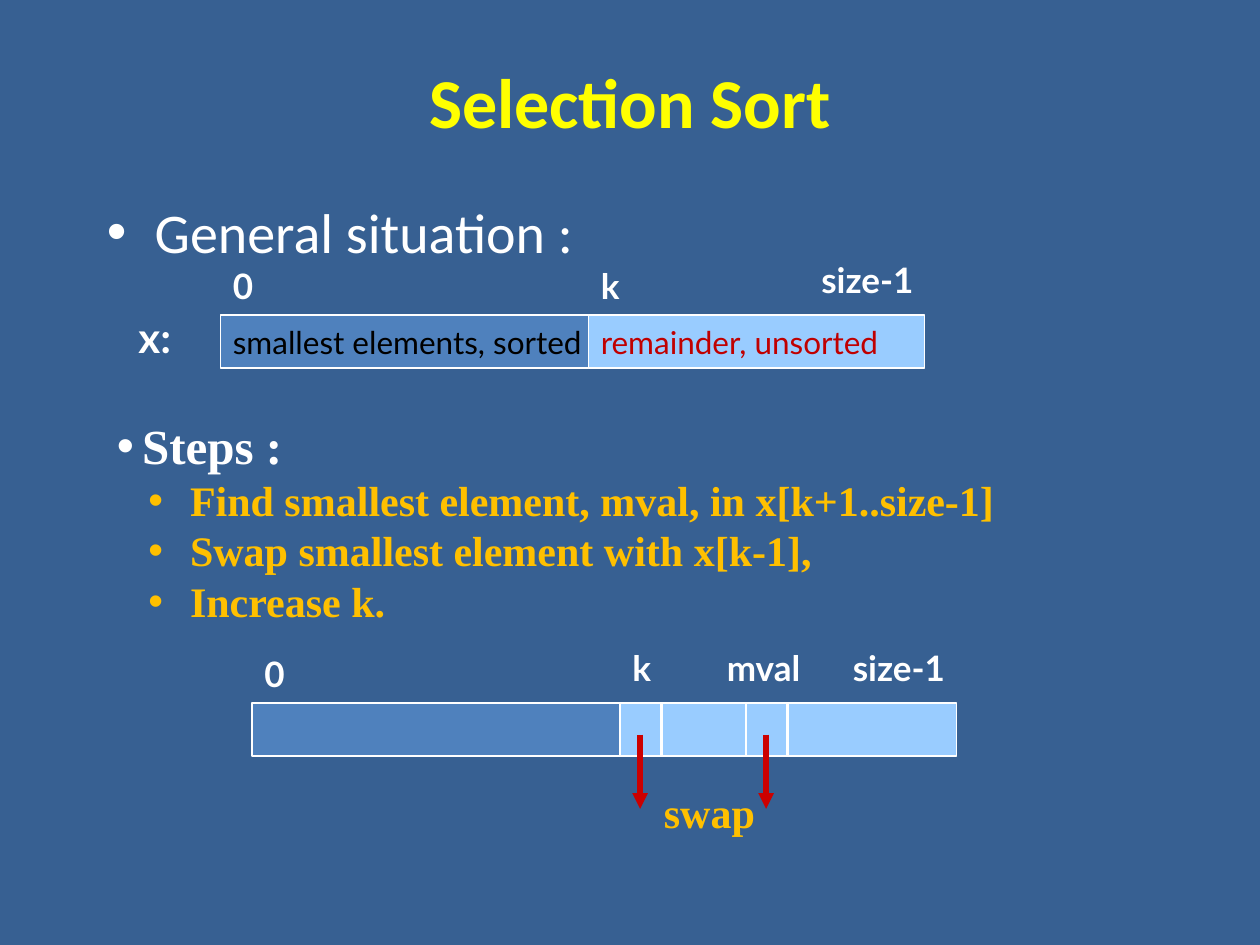
from lxml import etree
from pptx import Presentation
from pptx.dml.color import RGBColor
from pptx.enum.shapes import MSO_CONNECTOR, MSO_SHAPE
from pptx.enum.text import MSO_ANCHOR, PP_ALIGN
from pptx.oxml.ns import qn
from pptx.util import Inches, Pt

COLORS = {
    "background": "376092", "title": "FFFF00", "white": "FFFFFF",
    "sorted": "4F81BD", "unsorted": "99CCFF", "black": "000000",
    "remainder": "C00000", "step": "FFC000", "arrow": "CC0000",
}
TITLE = "Selection Sort"
SITUATION = "General situation :"
STEPS_HEADING = "Steps :"
STEPS = [
    "Find smallest element, mval, in x[k+1..size-1]",
    "Swap smallest element with x[k-1],",
    "Increase k.",
]
SORTED_W, UNSORTED_W, BAR_H = 2.92, 2.67, 0.42
ARRAYS = [
    {
        "left": 1.75, "top": 2.5,
        "texts": ["smallest elements, sorted", "remainder, unsorted"],
        "labels": [("0", 0, 0.45, 0.38), ("k", 2.92, 0.45, 0.37), ("size-1", 4.67, 0.5, 1.43)],
    },
    {
        "left": 2, "top": 5.58,
        "texts": ["", ""],
        "labels": [("0", 0, 0.45, 0.38), ("k", 2.92, 0.5, 0.37),
                   ("mval", 3.67, 0.5, 1.43), ("size-1", 4.67, 0.5, 1.43)],
    },
]
DIVIDERS = [5.25, 5.92, 6.25]
SWAP_ARROWS = [5.08, 6.08]


def rgb(name):
    return RGBColor.from_string(COLORS[name])


def style(p, size, color, font="Lato", bold=False):
    for r in p.runs:
        r.font.size = Pt(size)
        r.font.name = font
        r.font.bold = bold
        r.font.color.rgb = rgb(color)


def add_text(s, text, left, top, width, height, size, color, font="Lato", bold=True):
    tf = s.shapes.add_textbox(Inches(left), Inches(top), Inches(width), Inches(height)).text_frame
    tf.word_wrap = True
    tf.text = text
    style(tf.paragraphs[0], size, color, font, bold)
    return tf


def add_bullet(p, margin, hanging):
    pPr = p._p.get_or_add_pPr()
    pPr.set("marL", str(Inches(margin)))
    pPr.set("indent", str(-Inches(hanging)))
    etree.SubElement(pPr, qn("a:buFont")).set("typeface", "Arial")
    etree.SubElement(pPr, qn("a:buChar")).set("char", "•")


def add_bar(s, left, top, width, fill, text, color):
    sp = s.shapes.add_shape(MSO_SHAPE.RECTANGLE, Inches(left), Inches(top), Inches(width), Inches(BAR_H))
    sp.shadow.inherit = False
    sp.fill.solid()
    sp.fill.fore_color.rgb = rgb(fill)
    sp.line.color.rgb = rgb("white")
    sp.line.width = Pt(0.75)
    if text:
        tf = sp.text_frame
        tf.word_wrap = False
        tf.vertical_anchor = MSO_ANCHOR.MIDDLE
        tf.text = text
        tf.paragraphs[0].alignment = PP_ALIGN.LEFT
        style(tf.paragraphs[0], 18, color)


def add_vertical(s, x, top, bottom, color, width, arrow=False):
    line = s.shapes.add_connector(MSO_CONNECTOR.STRAIGHT, Inches(x), Inches(top), Inches(x), Inches(bottom))
    line.line.color.rgb = rgb(color)
    line.line.width = Pt(width)
    if arrow:
        etree.SubElement(line.line._get_or_add_ln(), qn("a:tailEnd")).set("type", "triangle")
    etree.SubElement(line._element.spPr, qn("a:effectLst"))


def add_array(s, left, top, texts, labels):
    add_bar(s, left + SORTED_W, top, UNSORTED_W, "unsorted", texts[1], "remainder")
    add_bar(s, left, top, SORTED_W, "sorted", texts[0], "black")
    for text, dx, rise, width in labels:
        add_text(s, text, left + dx, top - rise, width, 0.43, 20, "white")


def add_steps(s):
    tf = add_text(s, STEPS_HEADING, 0.83, 3.25, 7.72, 1.78, 28, "white", "Times New Roman")
    add_bullet(tf.paragraphs[0], 0.2, 0.2)
    for step in STEPS:
        p = tf.add_paragraph()
        p.text = step
        p.level = 1
        p.line_spacing = Pt(28.8)
        style(p, 24, "step", "Times New Roman", True)
        add_bullet(p, 0.58, 0.33)


def main():
    prs = Presentation()
    prs.slide_width, prs.slide_height = Inches(10), Inches(7.5)
    s = prs.slides.add_slide(prs.slide_layouts[5])
    s.background.fill.solid()
    s.background.fill.fore_color.rgb = rgb("background")

    title = s.shapes.title
    title.left, title.top, title.width, title.height = (Inches(v) for v in (0.5, 0.17, 9, 1.25))
    tf = title.text_frame
    tf.text = TITLE
    tf.vertical_anchor = MSO_ANCHOR.MIDDLE
    tf.paragraphs[0].alignment = PP_ALIGN.CENTER
    style(tf.paragraphs[0], 40, "title", "Calibri", True)

    tf = add_text(s, SITUATION, 0.75, 1.52, 8.5, 0.72, 32, "white", "Calibri", False)
    add_bullet(tf.paragraphs[0], 0.38, 0.38)
    add_text(s, "x:", 1, 2.42, 0.52, 0.5, 24, "white")
    add_steps(s)
    for array in ARRAYS:
        add_array(s, **array)

    top = ARRAYS[1]["top"]
    for x in DIVIDERS:
        add_vertical(s, x, top, top + BAR_H, "white", 1.5)
    for x in SWAP_ARROWS:
        add_vertical(s, x, top + 0.25, top + 0.84, "arrow", 3, True)
    add_text(s, "swap", 5.17, 6.19, 1.25, 0.5, 24, "step", "Times New Roman")

    prs.save("out.pptx")


if __name__ == "__main__":
    main()
